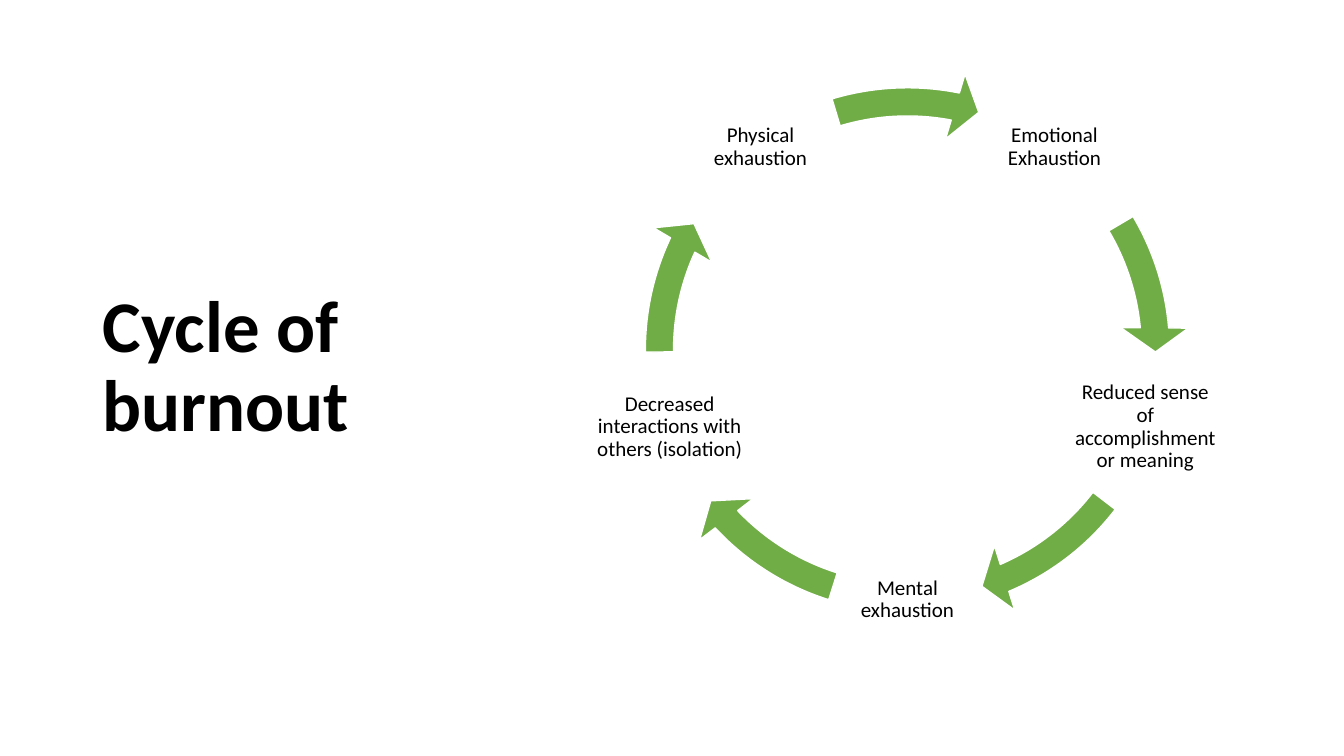
"""Build the "Cycle of burnout" slide: a title beside a ring of five stages joined by arrows."""
import math
from dataclasses import dataclass

from pptx import Presentation
from pptx import util as u
from pptx.dml.color import RGBColor
from pptx.enum import shapes, text


@dataclass(frozen=True)
class Theme:
    font: str = "Calibri"
    ink: RGBColor = RGBColor(0x00, 0x00, 0x00)
    paper: RGBColor = RGBColor(0xFF, 0xFF, 0xFF)
    arrow: RGBColor = RGBColor(0x70, 0xAD, 0x47)
    title_size: u.Pt = u.Pt(52)
    stage_size: u.Pt = u.Pt(15)


theme = Theme()


def write(frame, words, size, bold, align, space_after):
    frame.word_wrap = True
    frame.auto_size = text.MSO_AUTO_SIZE.NONE
    frame.vertical_anchor = text.MSO_ANCHOR.MIDDLE
    paragraph = frame.paragraphs[0]
    paragraph.alignment = align
    paragraph.line_spacing = 0.9
    paragraph.space_after = space_after
    run = paragraph.add_run()
    run.text = words
    run.font.name = theme.font
    run.font.size = size
    run.font.bold = bold
    run.font.color.rgb = theme.ink


deck = Presentation()
deck.slide_width, deck.slide_height = u.Inches(13.33), u.Inches(7.5)
slide = deck.slides.add_slide(deck.slide_layouts[5])
slide.background.fill.solid()
slide.background.fill.fore_color.rgb = theme.paper

title = slide.shapes.title
title.left, title.top = u.Inches(0.92), u.Inches(0.61)
title.width, title.height = u.Inches(3.69), u.Inches(6.09)
write(title.text_frame, "Cycle of burnout", theme.title_size, True, text.PP_ALIGN.LEFT, u.Pt(6))

center_x, center_y = 9, 3.47
stage_radius, stage_side, ring_side = 2.48, 1.49, 5.59
inset = u.Inches(0.02)

# Each stage: its words, then the start and end angle of the arrow leaving it.
stages = [
    ("Emotional Exhaustion", 329.41, 354.92),
    ("Reduced sense of accomplishment or meaning", 37.53, 66.94),
    ("Mental exhaustion", 107.47, 136.88),
    ("Decreased interactions with others (isolation)", 179.49, 205),
    ("Physical exhaustion", 253.28, 281.13),
]

for index, (words, arrow_start, arrow_end) in enumerate(stages):
    angle = math.radians(-54 + index * 360 / len(stages))
    stage = slide.shapes.add_textbox(
        u.Inches(center_x + stage_radius * math.cos(angle) - stage_side / 2),
        u.Inches(center_y + stage_radius * math.sin(angle) - stage_side / 2),
        u.Inches(stage_side), u.Inches(stage_side))
    frame = stage.text_frame
    frame.margin_left = frame.margin_right = frame.margin_top = frame.margin_bottom = inset
    write(frame, words, theme.stage_size, False, text.PP_ALIGN.CENTER, u.Pt(5.25))

    arrow = slide.shapes.add_shape(
        shapes.MSO_SHAPE.CIRCULAR_ARROW,
        u.Inches(center_x - ring_side / 2), u.Inches(center_y - ring_side / 2),
        u.Inches(ring_side), u.Inches(ring_side))
    settings = (0.05, 5.59 * 0.6, arrow_end * 0.6, arrow_start * 0.6, 0.06)
    for position, setting in enumerate(settings):
        arrow.adjustments[position] = setting
    arrow.shadow.inherit = False
    arrow.fill.solid()
    arrow.fill.fore_color.rgb = theme.arrow
    arrow.line.color.rgb = theme.paper
    arrow.line.width = u.Pt(1)

deck.save("out.pptx")
